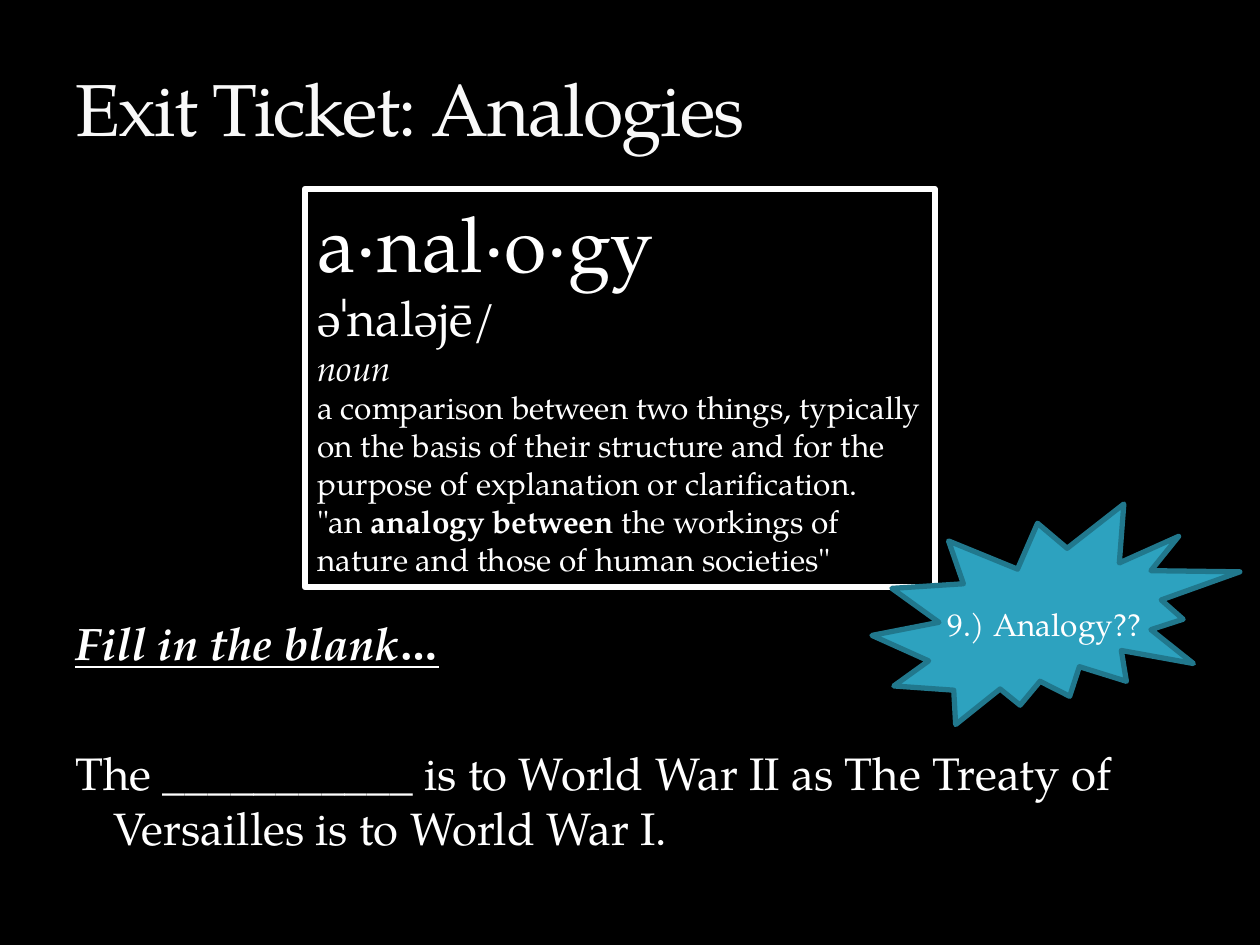
from pptx import Presentation
from pptx.dml.color import RGBColor
from pptx.enum import shapes, text
from pptx.util import Inches, Pt

FONT = "TeX Gyre Pagella"
WHITE = "FFFFFF"


def color(value):
    return RGBColor.from_string(value)


def add_run(paragraph, content, size, hex_color=WHITE, bold=False,
            italic=False, underline=False, spacing=None):
    """Add formatted text; spacing is the letter spacing in points."""
    run = paragraph.add_run()
    run.text = content
    font = run.font
    font.name, font.size = FONT, Pt(size)
    font.bold, font.italic, font.underline = bold, italic, underline
    font.color.rgb = color(hex_color)
    if spacing is not None:
        font._element.set("spc", str(int(spacing * 100)))


def add_text_box(parent, left, top, width, height, paragraphs,
                 anchor=text.MSO_ANCHOR.TOP, hanging=0, space_before=()):
    """Each paragraph is a list of (text, format) runs."""
    box = parent.add_textbox(Inches(left), Inches(top), Inches(width), Inches(height))
    frame = box.text_frame
    frame.word_wrap = True
    frame.vertical_anchor = anchor
    for index, runs in enumerate(paragraphs):
        paragraph = frame.add_paragraph() if index else frame.paragraphs[0]
        if space_before:
            paragraph.space_before = Pt(space_before[index])
        if hanging:
            properties = paragraph._p.get_or_add_pPr()
            properties.set("marL", str(Inches(hanging)))
            properties.set("indent", str(-Inches(hanging)))
        for content, style in runs:
            add_run(paragraph, content, **style)
    return box


def set_line(shape, hex_color, width):
    shape.line.color.rgb = color(hex_color)
    shape.line.width = Pt(width)


def add_definition(slide):
    body = {"size": 18}
    box = add_text_box(slide.shapes, 2.42, 1.5, 5, 3.16, [
        [("a·nal·o·gy", {"size": 44})],
        [("əˈnaləjē/", {"size": 28})],
        [("noun", {"size": 20, "italic": True})],
        [("a comparison between two things, typically on the basis of their "
          "structure and for the purpose of explanation or clarification.", body)],
        [('"an ', body),
         ("analogy between", {"size": 18, "bold": True}),
         (' the workings of nature and those of human societies"', body)],
    ])
    set_line(box, WHITE, 3.5)


def add_burst(slide):
    group = slide.shapes.add_group_shape()
    burst = group.shapes.add_shape(shapes.MSO_SHAPE.EXPLOSION2, Inches(6.92),
                                   Inches(4), Inches(2.92), Inches(1.75))
    burst.shadow.inherit = False
    burst.fill.solid()
    burst.fill.fore_color.rgb = color("2DA2BF")
    set_line(burst, "21788D", 3)
    add_text_box(group.shapes, 7.42, 4.75, 1.92, 0.4,
                 [[("9.) Analogy??", {"size": 18})]])


def main():
    presentation = Presentation()
    presentation.slide_width, presentation.slide_height = Inches(10), Inches(7.5)
    slide = presentation.slides.add_slide(presentation.slide_layouts[6])
    slide.background.fill.solid()
    slide.background.fill.fore_color.rgb = color("000000")

    add_text_box(slide.shapes, 0.5, 4.83, 9, 2.17, [
        [("Fill in the blank…",
          {"size": 26, "bold": True, "italic": True, "underline": True})],
        [("The ___________ is to World War II as The Treaty of Versailles "
          "is to World War I.", {"size": 26})],
    ], hanging=0.3, space_before=(6, 43.5))
    add_text_box(slide.shapes, 0.5, 0.33, 9, 0.92, [
        [("Exit Ticket: Analogies",
          {"size": 42, "hex_color": "F9F9F9", "spacing": -1})],
    ], anchor=text.MSO_ANCHOR.BOTTOM)
    add_definition(slide)
    add_burst(slide)
    presentation.save("out.pptx")


if __name__ == "__main__":
    main()
